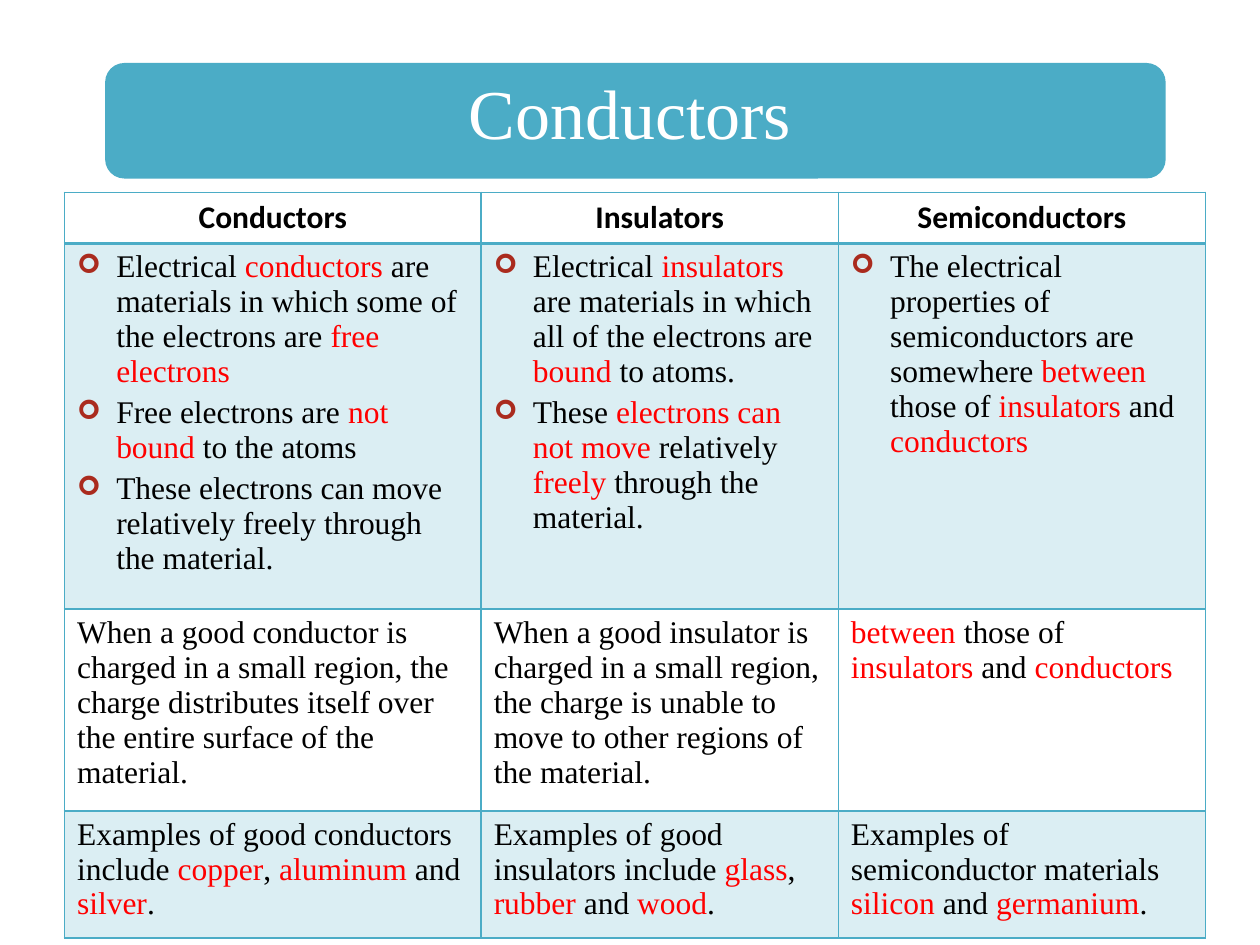
from lxml import etree
from pptx import Presentation
from pptx.dml.color import RGBColor
from pptx.enum.shapes import MSO_SHAPE
from pptx.enum.text import PP_ALIGN
from pptx.oxml.ns import qn
from pptx.util import Cm, Pt

ROUNDED = MSO_SHAPE.ROUNDED_RECTANGLE
CENTER = PP_ALIGN.CENTER

HEADERS = ["Conductors", "Insulators", "Semiconductors"]
# Each cell is a list of paragraphs; words between asterisks are highlighted
ROWS = [
    [
        ["Electrical *conductors* are materials in which some of the electrons are *free electrons*",
         "Free electrons are *not bound* to the atoms",
         "These electrons can move relatively freely through the material."],
        ["Electrical *insulators* are materials in which all of the electrons are *bound* to atoms.",
         "These *electrons can not move *relatively *freely* through the material."],
        ["The electrical properties of semiconductors are somewhere *between* those of "
         "*insulators* and *conductors*"],
    ],
    [
        ["When a good conductor is charged in a small region, the charge distributes itself "
         "over the entire surface of the material."],
        ["When a good insulator is charged in a small region, the charge is unable to move "
         "to other regions of the material."],
        ["*between* those of *insulators* and *conductors*"],
    ],
    [
        ["Examples of good conductors include *copper*, *aluminum *and *silver*."],
        ["Examples of good insulators include *glass*, *rubber* and *wood*."],
        ["Examples of semiconductor materials *silicon* and *germanium*."],
    ],
]


def rgb(value):
    return RGBColor.from_string(value)


class Deck:
    accent, text, highlight, bullet = "4BACC6", "000000", "FF0000", "AA2B1E"
    serif, sans = "Times New Roman", "Calibri"

    def __init__(self, prs):
        self.s = prs.slides.add_slide(prs.slide_layouts[6])

    def font(self, r, size, name, color, bold=False):
        r.font.size, r.font.name, r.font.bold = Pt(size), name, bold
        r.font.color.rgb = rgb(color)

    def banner(self, x, y, w, h):
        sp = self.s.shapes.add_shape(ROUNDED, Cm(x), Cm(y), Cm(w), Cm(h))
        sp.shadow.inherit = False
        sp.fill.solid()
        sp.fill.fore_color.rgb = rgb(self.accent)
        sp.line.fill.background()

    def title(self, text, x, y, w, h):
        tf = self.s.shapes.add_textbox(Cm(x), Cm(y), Cm(w), Cm(h)).text_frame
        tf.word_wrap = True
        p = tf.paragraphs[0]
        p.text = text
        p.alignment = CENTER
        self.font(p.runs[0], 40, self.serif, "FFFFFF")

    def rich(self, p, text):
        p.space_before = Pt(3.6)
        for i, part in enumerate(text.split("*")):
            if part:
                r = p.add_run()
                r.text = part
                self.font(r, 18, self.serif, self.highlight if i % 2 else self.text)

    def add_bullet(self, p):
        pPr = p._p.get_or_add_pPr()
        pPr.set("marL", str(Cm(0.79)))
        pPr.set("indent", str(-Cm(0.79)))
        color = etree.SubElement(pPr, qn("a:buClr"))
        etree.SubElement(color, qn("a:srgbClr"), val=self.bullet)
        etree.SubElement(pPr, qn("a:buSzPct"), val="85000")
        etree.SubElement(pPr, qn("a:buFont"), typeface="Wingdings")
        etree.SubElement(pPr, qn("a:buChar"), char="➢")

    def cell_style(self, cell, shaded, top=1, bottom=1):
        tcPr = cell._tc.get_or_add_tcPr()
        for side, width in (("L", 1), ("R", 1), ("T", top), ("B", bottom)):
            ln = etree.SubElement(tcPr, qn("a:ln" + side), w=str(Pt(width)))
            fill = etree.SubElement(ln, qn("a:solidFill"))
            etree.SubElement(fill, qn("a:srgbClr"), val=self.accent)
        if shaded:
            cell.fill.solid()
            cell.fill.fore_color.rgb = rgb(self.accent)
            color = tcPr.find(qn("a:solidFill")).find(qn("a:srgbClr"))
            etree.SubElement(color, qn("a:alpha"), val="20000")
        else:
            cell.fill.background()

    def table(self, headers, rows, x, y, widths, heights):
        tbl = self.s.shapes.add_table(len(heights), len(widths), Cm(x), Cm(y),
                                      Cm(sum(widths)), Cm(sum(heights))).table
        tbl.first_row = tbl.horz_banding = False
        for col, w in zip(tbl.columns, widths):
            col.width = Cm(w)
        for row, h in zip(tbl.rows, heights):
            row.height = Cm(h)

        # Header row
        for j, text in enumerate(headers):
            cell = tbl.cell(0, j)
            self.cell_style(cell, False, bottom=2)
            p = cell.text_frame.paragraphs[0]
            p.text = text
            p.alignment = CENTER
            self.font(p.runs[0], 18, self.sans, self.text, bold=True)

        # Body rows: odd ones shaded, the first one bulleted
        for i, row in enumerate(rows, 1):
            for j, paragraphs in enumerate(row):
                cell = tbl.cell(i, j)
                self.cell_style(cell, i % 2 == 1, top=2 if i == 1 else 1)
                tf = cell.text_frame
                for k, text in enumerate(paragraphs):
                    p = tf.add_paragraph() if k else tf.paragraphs[0]
                    self.rich(p, text)
                    if i == 1:
                        self.add_bullet(p)


def main():
    prs = Presentation()
    prs.slide_width, prs.slide_height = Cm(25.4), Cm(19.05)
    deck = Deck(prs)

    # Title banner
    deck.banner(2.12, 1.27, 21.38, 2.33)
    deck.title("Conductors", 3.7, 1.27, 18, 1.96)

    # Comparison table
    deck.table(HEADERS, ROWS, 1.3, 3.88, [8.4, 7.2, 7.4], [1.03, 7.37, 4.06, 2.56])

    prs.save("out.pptx")


if __name__ == "__main__":
    main()
